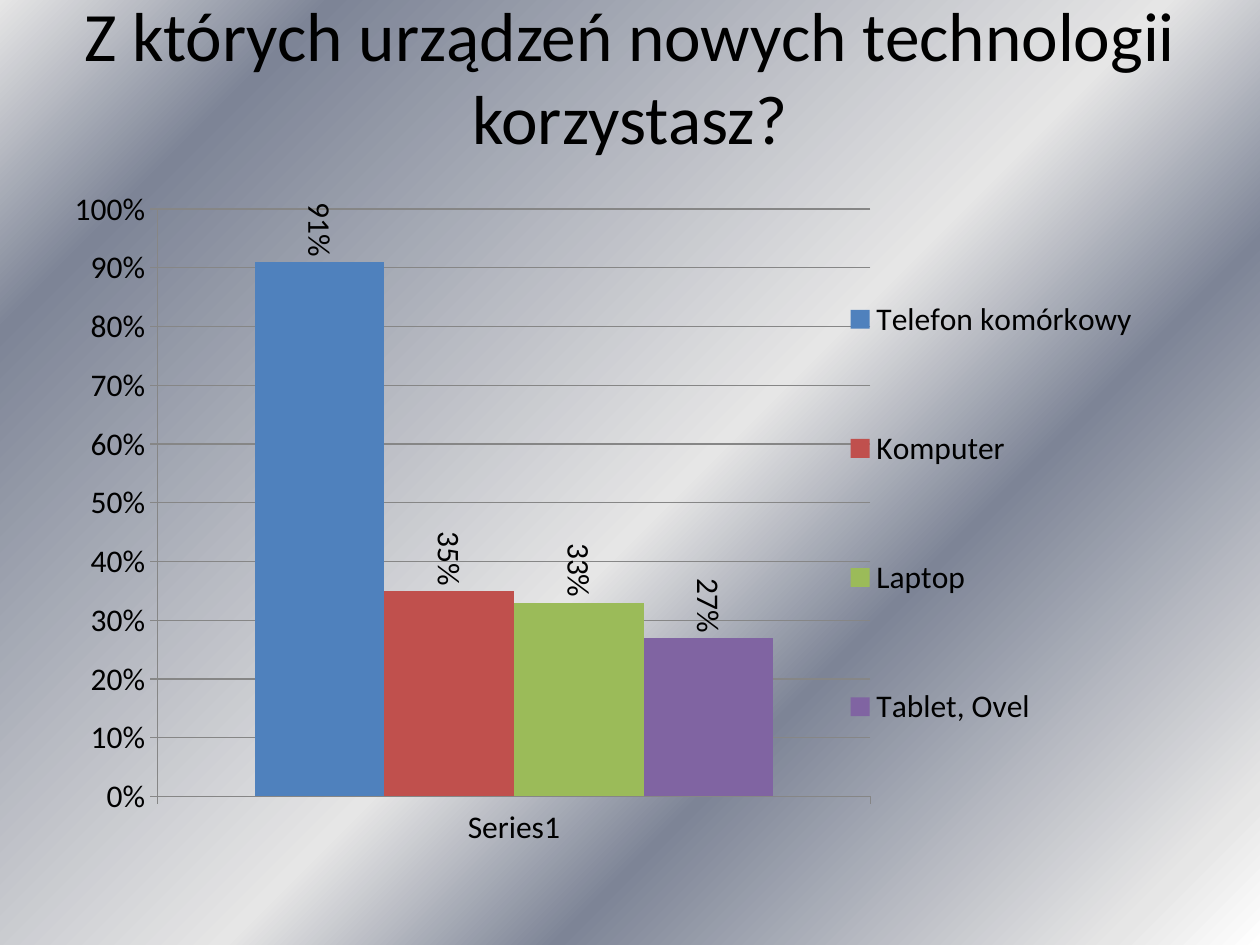
from lxml.etree import SubElement
from pptx import Presentation
from pptx.chart.data import CategoryChartData
from pptx.dml.color import RGBColor
from pptx.enum.chart import XL_CHART_TYPE, XL_LABEL_POSITION, XL_LEGEND_POSITION, XL_TICK_MARK
from pptx.enum.text import MSO_ANCHOR, PP_ALIGN
from pptx.oxml.ns import qn
from pptx.util import Pt

PX = 914400 / 126
FONT = "Calibri"
BLACK = "000000"
GRID = "868686"
STOPS = [(0, "FFFFFF"), (7, "E6E6E6"), (32, "7D8496"),
         (47, "E6E6E6"), (85, "7D8496"), (100, "E6E6E6")]
DEVICES = [("Telefon komórkowy", 0.91, "4F81BD"),
           ("Komputer", 0.35, "C0504D"),
           ("Laptop", 0.33, "9BBB59"),
           ("Tablet, Ovel", 0.27, "8064A2")]


def px(n):
    return round(n * PX)


def rgb(value):
    return RGBColor.from_string(value)


def style_font(font, size, color=BLACK):
    font.name = FONT
    font.size = Pt(size)
    font.color.rgb = rgb(color)


def add_text(s, text, x, y, w, h, size=18, color=BLACK,
             align=PP_ALIGN.LEFT, anchor=MSO_ANCHOR.MIDDLE, bottom=6):
    sp = s.shapes.add_textbox(px(x), px(y), px(w), px(h))
    tf = sp.text_frame
    tf.word_wrap = True
    tf.vertical_anchor = anchor
    tf.margin_bottom = px(bottom)
    p = tf.paragraphs[0]
    p.alignment = align
    r = p.add_run()
    r.text = text
    style_font(r.font, size, color)


def set_background(s, stops, angle):
    s.background.fill.solid()
    solid = next(s.element.iter(qn("p:bgPr")))[0]
    grad = solid.makeelement(qn("a:gradFill"), {"rotWithShape": "1"})
    solid.getparent().replace(solid, grad)
    gs_list = SubElement(grad, qn("a:gsLst"))
    for position, color in stops:
        gs = SubElement(gs_list, qn("a:gs"), pos=str(position * 1000))
        SubElement(gs, qn("a:srgbClr"), val=color)
    SubElement(grad, qn("a:lin"), ang=str(angle * 60000), scaled="0")


def set_layout(parent, after, x, y, w, h, inner=False):
    for old in parent.findall(qn("c:layout")):
        parent.remove(old)
    layout = parent.makeelement(qn("c:layout"), {})
    manual = SubElement(layout, qn("c:manualLayout"))
    if inner:
        SubElement(manual, qn("c:layoutTarget"), val="inner")
    for tag in ("xMode", "yMode"):
        SubElement(manual, qn("c:" + tag), val="edge")
    for tag, value in zip("xywh", (x, y, w, h)):
        SubElement(manual, qn("c:" + tag), val=str(value))
    if after is None:
        parent.insert(0, layout)
    else:
        after.addnext(layout)


def style_axis(axis):
    axis.major_tick_mark = XL_TICK_MARK.OUTSIDE
    axis.minor_tick_mark = XL_TICK_MARK.NONE
    axis.format.line.color.rgb = rgb(GRID)
    style_font(axis.tick_labels.font, 18)


def style_series(series, color):
    series.format.fill.solid()
    series.format.fill.fore_color.rgb = rgb(color)
    labels = series.data_labels
    labels.show_value = True
    labels.number_format = "0%"
    labels.number_format_is_linked = False
    labels.position = XL_LABEL_POSITION.OUTSIDE_END
    style_font(labels.font, 18)
    body = next(labels._element.iter(qn("a:bodyPr")))
    body.set("rot", "5400000")
    body.set("vert", "horz")


def add_column_chart(s, devices, x, y, w, h):
    data = CategoryChartData(number_format="0%")
    data.categories = ["Series1"]
    for name, value, _ in devices:
        data.add_series(name, [value])
    chart = s.shapes.add_chart(XL_CHART_TYPE.COLUMN_CLUSTERED,
                               px(x), px(y), px(w), px(h), data).chart
    style_font(chart.font, 18)
    chart.has_title = False

    plot = chart.plots[0]
    plot.gap_width = 150
    plot.overlap = 0
    plot.vary_by_categories = False
    for series, (_, _, color) in zip(plot.series, devices):
        style_series(series, color)

    style_axis(chart.category_axis)
    axis = chart.value_axis
    style_axis(axis)
    axis.minimum_scale, axis.maximum_scale, axis.major_unit = 0, 1, 0.1
    axis.tick_labels.number_format = "0%"
    axis.tick_labels.number_format_is_linked = False
    axis.has_major_gridlines = True
    axis.major_gridlines.format.line.color.rgb = rgb(GRID)

    chart.has_legend = True
    legend = chart.legend
    legend.position = XL_LEGEND_POSITION.RIGHT
    legend.include_in_layout = False
    style_font(legend.font, 18)
    element = legend._element
    set_layout(element, element.find(qn("c:legendPos")), 0.66, 0.05, 0.31, 0.89)
    area = next(chart._chartSpace.iter(qn("c:plotArea")))
    set_layout(area, None, 0.09, 0.05, 0.62, 0.86, inner=True)


def main():
    prs = Presentation()
    prs.slide_width, prs.slide_height = px(1260), px(945)
    s = prs.slides.add_slide(prs.slide_layouts[6])
    set_background(s, STOPS, 225)
    add_text(s, "Z których urządzeń nowych technologii korzystasz?",
             63, 38, 1134, 158, size=39.6, align=PP_ALIGN.CENTER, bottom=89)
    add_column_chart(s, DEVICES, 54, 175, 1150, 683)
    prs.save("out.pptx")


if __name__ == "__main__":
    main()
